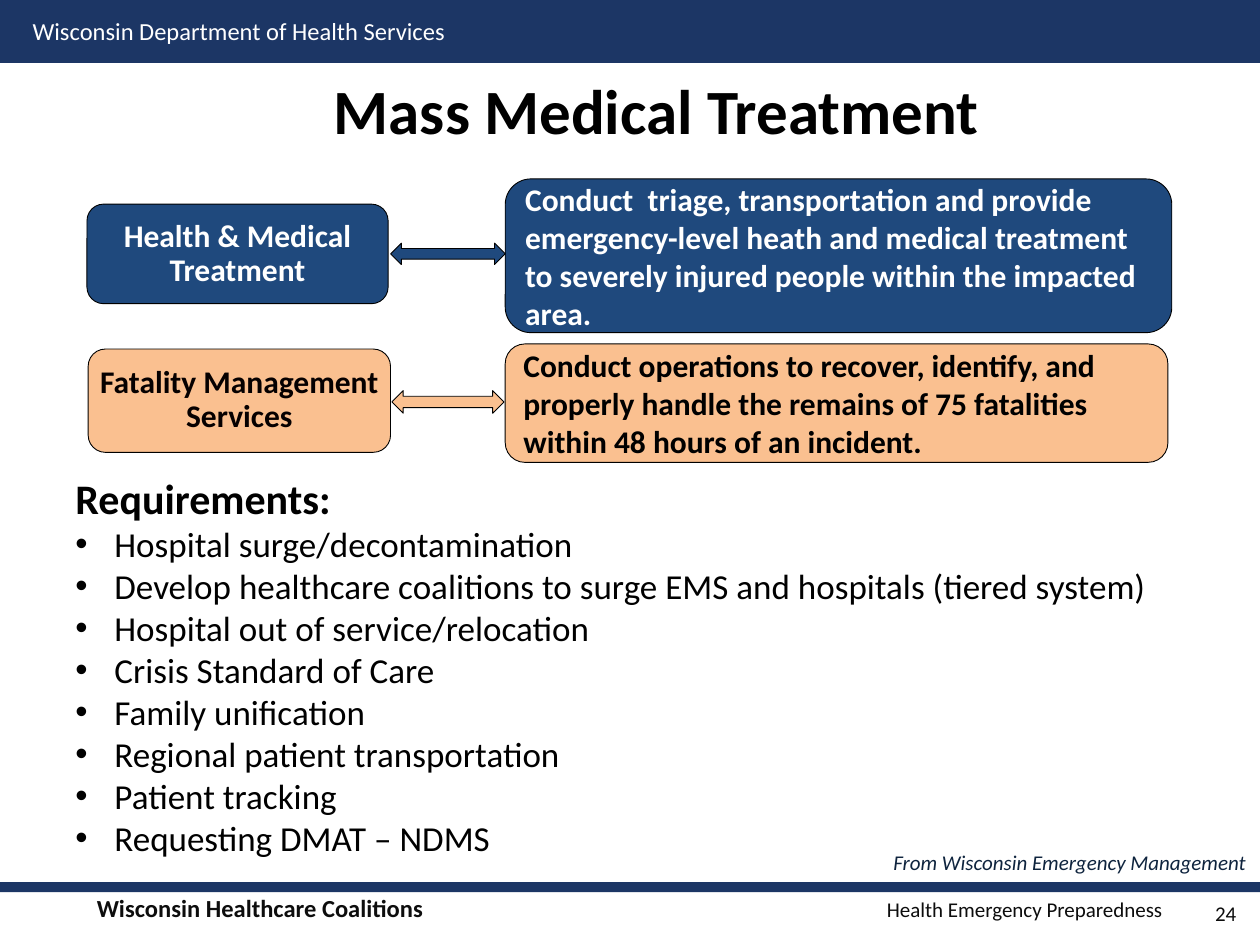
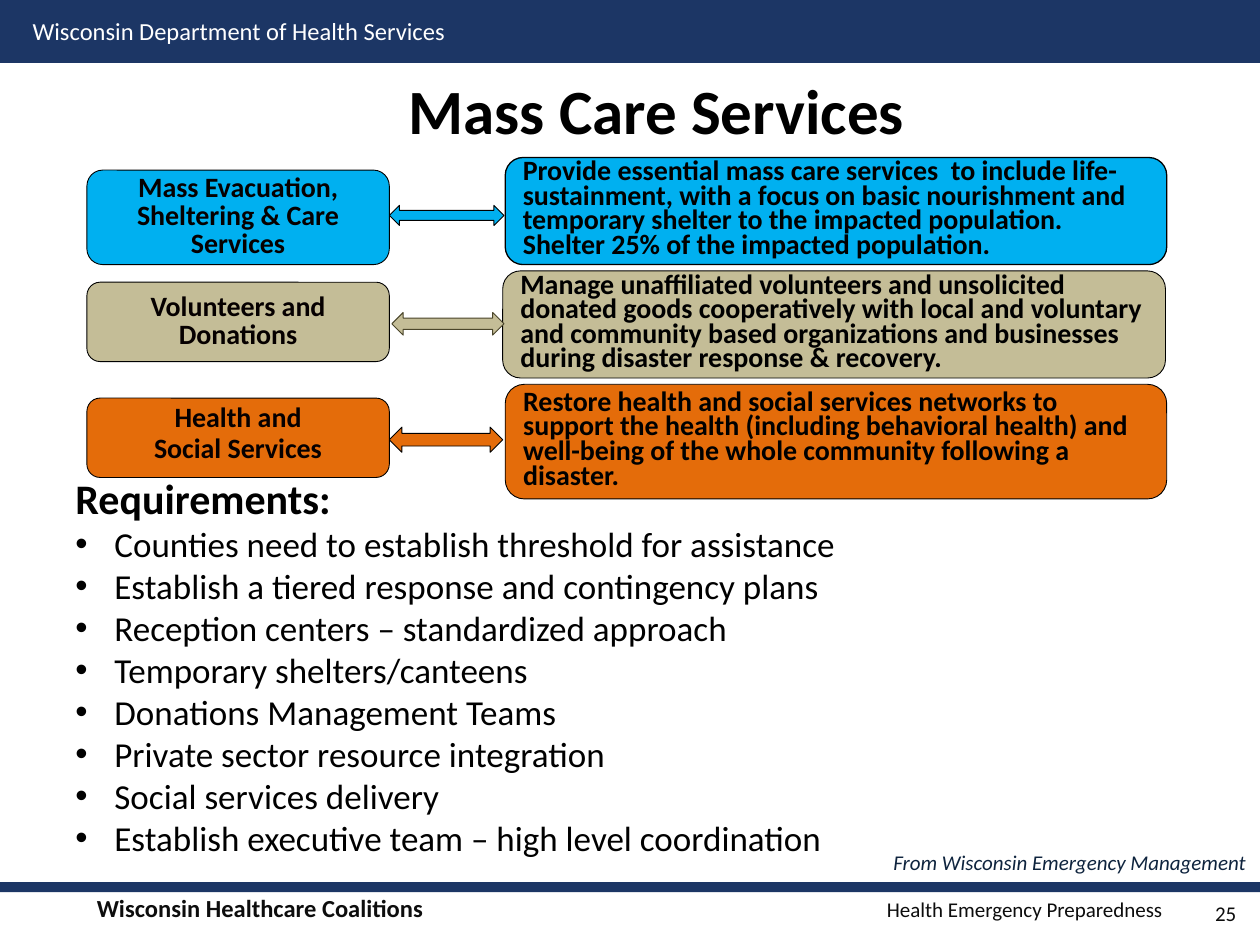
from lxml import etree
from pptx import Presentation
from pptx.dml.color import RGBColor
from pptx.enum.shapes import MSO_SHAPE
from pptx.enum.text import MSO_ANCHOR, PP_ALIGN
from pptx.oxml.ns import qn
from pptx.util import Inches, Pt

RECT, ROUNDED = MSO_SHAPE.RECTANGLE, MSO_SHAPE.ROUNDED_RECTANGLE
DOUBLE_ARROW = MSO_SHAPE.LEFT_RIGHT_ARROW
TOP, MIDDLE = MSO_ANCHOR.TOP, MSO_ANCHOR.MIDDLE
LEFT, CENTER, RIGHT = PP_ALIGN.LEFT, PP_ALIGN.CENTER, PP_ALIGN.RIGHT

FONT = "Calibri"
COLORS = {
    "band": "1C3665", "white": "FFFFFF", "black": "000000", "footer": "0D0D0D",
    "credit": "0F243E", "label": "060000", "navy": "1F497D", "peach": "FAC090",
    "sky": "00B0F0", "khaki": "C4BD97", "olive": "4A452A", "orange": "E46C0A",
}

SLIDES = [
    {
        "title": "Mass Medical Treatment",
        "number": 24,
        "size": 18,
        "detail_spacing": None,
        "rows": [
            {
                "color": "navy", "label_ink": "white", "detail_ink": "white",
                "label": ["Health & Medical Treatment"], "label_spacing": 0.9, "label_after": 6.3,
                "label_box": (0.69, 1.62, 2.39, 0.79),
                "arrow_box": (3.1, 1.93, 0.91, 0.17),
                "detail_box": (4.01, 1.42, 5.29, 1.22),
                "detail": "Conduct  triage, transportation and provide emergency-level heath and "
                          "medical treatment to severely injured people within the impacted area.",
            },
            {
                "color": "peach",
                "label": ["Fatality Management Services"], "label_spacing": 0.9, "label_after": 6.3,
                "label_box": (0.7, 2.77, 2.4, 0.82),
                "arrow_box": (3.11, 3.1, 0.89, 0.18),
                "detail_box": (4.01, 2.73, 5.26, 0.94),
                "detail": "Conduct operations to recover, identify, and properly handle the "
                          "remains of 75 fatalities within 48 hours of an incident.",
            },
        ],
        "requirements": [
            "Hospital surge/decontamination",
            "Develop healthcare coalitions to surge EMS and hospitals (tiered system)",
            "Hospital out of service/relocation",
            "Crisis Standard of Care",
            "Family unification",
            "Regional patient transportation",
            "Patient tracking",
            "Requesting DMAT – NDMS",
        ],
    },
    {
        "title": "Mass Care Services",
        "number": 25,
        "size": 16,
        "detail_spacing": Pt(14),
        "rows": [
            {
                "color": "sky", "detail_line": 0.75,
                "label": ["Mass Evacuation, Sheltering & Care Services"],
                "label_spacing": Pt(16), "label_after": 5.6,
                "label_box": (0.69, 1.35, 2.4, 0.75),
                "arrow_box": (3.09, 1.63, 0.91, 0.16),
                "detail_box": (4.01, 1.25, 5.25, 0.85),
                "detail": "Provide essential mass care services  to include life-sustainment, with "
                          "a focus on basic nourishment and temporary shelter to the impacted "
                          "population. Shelter 25% of the impacted population.",
            },
            {
                "color": "khaki", "arrow_line": "olive",
                "label": ["Volunteers and", "Donations"], "label_spacing": Pt(16), "label_after": 0,
                "label_box": (0.69, 2.24, 2.4, 0.63),
                "arrow_box": (3.11, 2.48, 0.89, 0.18),
                "detail_box": (3.99, 2.15, 5.26, 0.85),
                "detail": "Manage unaffiliated volunteers and unsolicited donated goods "
                          "cooperatively with local and voluntary and community based organizations "
                          "and businesses during disaster response & recovery.",
            },
            {
                "color": "orange",
                "label": ["Health and", "Social Services"], "label_spacing": Pt(12), "label_after": 5.6,
                "label_box": (0.69, 3.16, 2.4, 0.63),
                "arrow_box": (3.09, 3.39, 0.9, 0.2),
                "detail_box": (4.01, 3.05, 5.25, 0.91),
                "detail": "Restore health and social services networks to support the health "
                          "(including behavioral health) and well-being of the whole community "
                          "following a disaster.",
            },
        ],
        "requirements": [
            "Counties need to establish threshold for assistance",
            "Establish a tiered response and contingency plans",
            "Reception centers – standardized approach",
            "Temporary shelters/canteens",
            "Donations Management Teams",
            "Private sector resource integration",
            "Social services delivery",
            "Establish executive team – high level coordination",
        ],
    },
]


def rgb(name):
    """Return the named palette colour."""
    return RGBColor.from_string(COLORS[name])


def set_font(font, size, color, bold=False, italic=False):
    """Apply the deck font to a run or paragraph font."""
    font.name, font.size, font.bold, font.italic = FONT, Pt(size), bold, italic
    font.color.rgb = rgb(color)


def add_block(slide, kind, box, fill, line=None, line_width=0.5):
    """Draw a filled preset shape, outlined when a line colour is given."""
    block = slide.shapes.add_shape(kind, *map(Inches, box))
    block.shadow.inherit = False
    block.fill.solid()
    block.fill.fore_color.rgb = rgb(fill)
    if line:
        block.line.color.rgb = rgb(line)
        block.line.width = Pt(line_width)
    else:
        block.line.fill.background()
    return block


def write(holder, lines, size, color, align=LEFT, anchor=TOP, insets=(0.1, 0.05),
          spacing=None, after=0, wrap=True, **style):
    """Fill a shape or text box with equally styled paragraphs."""
    frame = holder.text_frame
    frame.word_wrap = wrap
    frame.vertical_anchor = anchor
    frame.margin_left = frame.margin_right = Inches(insets[0])
    frame.margin_top = frame.margin_bottom = Inches(insets[1])
    frame.text = "\n".join(lines)
    for paragraph in frame.paragraphs:
        paragraph.alignment = align
        paragraph.space_after = Pt(after)
        if spacing:
            paragraph.line_spacing = spacing
        set_font(paragraph.font, size, color, **style)
    return frame


def add_text(slide, box, text, size, color, **options):
    """Add a text box holding one paragraph."""
    return write(slide.shapes.add_textbox(*map(Inches, box)), [text], size, color, **options)


def add_frame(slide, title, number):
    """Draw the bands, header, title, credit and footer shared by all slides."""
    add_block(slide, RECT, (0, 7, 10, 0.08), "band")
    add_block(slide, RECT, (0, 0, 10, 0.5), "band")
    add_text(slide, (0.16, 0.08, 3.51, 0.34), "Wisconsin Department of Health Services", 14, "white")
    add_text(slide, (0.92, 0.57, 8.58, 1.13), title, 36, "black",
             align=CENTER, insets=(0.1, 0), bold=True)
    add_text(slide, (6.98, 6.69, 3.02, 0.3), "From Wisconsin Emergency Management", 12, "credit",
             align=CENTER, wrap=False, italic=True)
    add_text(slide, (9.33, 7.08, 0.58, 0.34), str(number), 12, "footer", align=RIGHT, anchor=MIDDLE)
    add_footer(slide, (0.67, 7.04, 8.67, 0.34))


def add_footer(slide, box):
    """Write the footer with its second part on a right tab."""
    frame = slide.shapes.add_textbox(*map(Inches, box)).text_frame
    frame.word_wrap = True
    footer = frame.paragraphs[0]
    tabs = etree.SubElement(footer._p.get_or_add_pPr(), qn("a:tabLst"))
    etree.SubElement(tabs, qn("a:tab"), pos=str(Inches(box[2] - 0.21)), algn="r")
    for words, size, bold in (("Wisconsin Healthcare Coalitions\t", 14, True),
                              ("Health Emergency Preparedness", 12, False)):
        part = footer.add_run()
        part.text = words
        set_font(part.font, size, "footer", bold=bold)


def add_row(slide, row, size, detail_spacing):
    """Draw a service label, its double arrow and its description."""
    color = row["color"]
    detail = add_block(slide, ROUNDED, row["detail_box"], color, "black", row.get("detail_line", 0.5))
    write(detail, [row["detail"]], size, row.get("detail_ink", "black"),
          anchor=MIDDLE, spacing=detail_spacing, bold=True)
    add_block(slide, DOUBLE_ARROW, row["arrow_box"], color, row.get("arrow_line", "black"))
    label = add_block(slide, ROUNDED, row["label_box"], color, "black")
    write(label, row["label"], size, row.get("label_ink", "label"), align=CENTER, anchor=MIDDLE,
          insets=(0.04, 0.03), spacing=row["label_spacing"], after=row["label_after"], bold=True)


def add_requirements(slide, box, items):
    """Write the requirements heading and its bullet list."""
    frame = slide.shapes.add_textbox(*map(Inches, box)).text_frame
    frame.word_wrap = True
    frame.text = "\n".join(["Requirements:", *items])
    for index, paragraph in enumerate(frame.paragraphs):
        heading = index == 0
        properties = paragraph._p.get_or_add_pPr()
        properties.set("marL", str(Inches(0.31)))
        properties.set("indent", str(Inches(-0.31)))
        if not heading:
            etree.SubElement(properties, qn("a:buFont"), typeface="Arial")
            etree.SubElement(properties, qn("a:buChar"), char="•")
        set_font(paragraph.font, 24 if heading else 20, "black", bold=heading)


def main():
    """Build and save the deck."""
    deck = Presentation()
    deck.slide_width, deck.slide_height = Inches(10), Inches(7.5)
    for content in SLIDES:
        slide = deck.slides.add_slide(deck.slide_layouts[6])
        add_frame(slide, content["title"], content["number"])
        add_requirements(slide, (0.5, 3.7, 9, 3.2), content["requirements"])
        for row in content["rows"]:
            add_row(slide, row, content["size"], content["detail_spacing"])
    deck.save("out.pptx")


if __name__ == "__main__":
    main()
